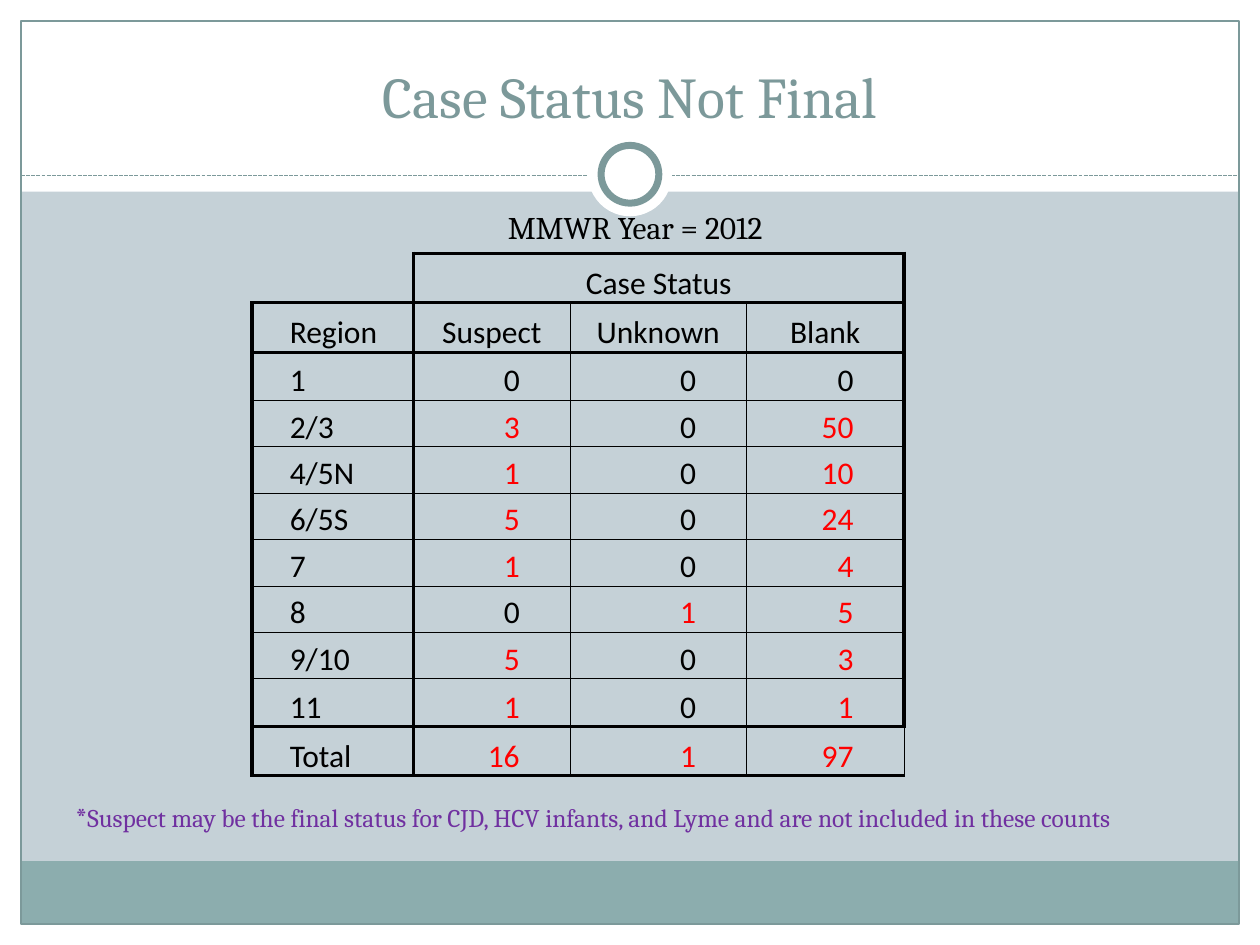
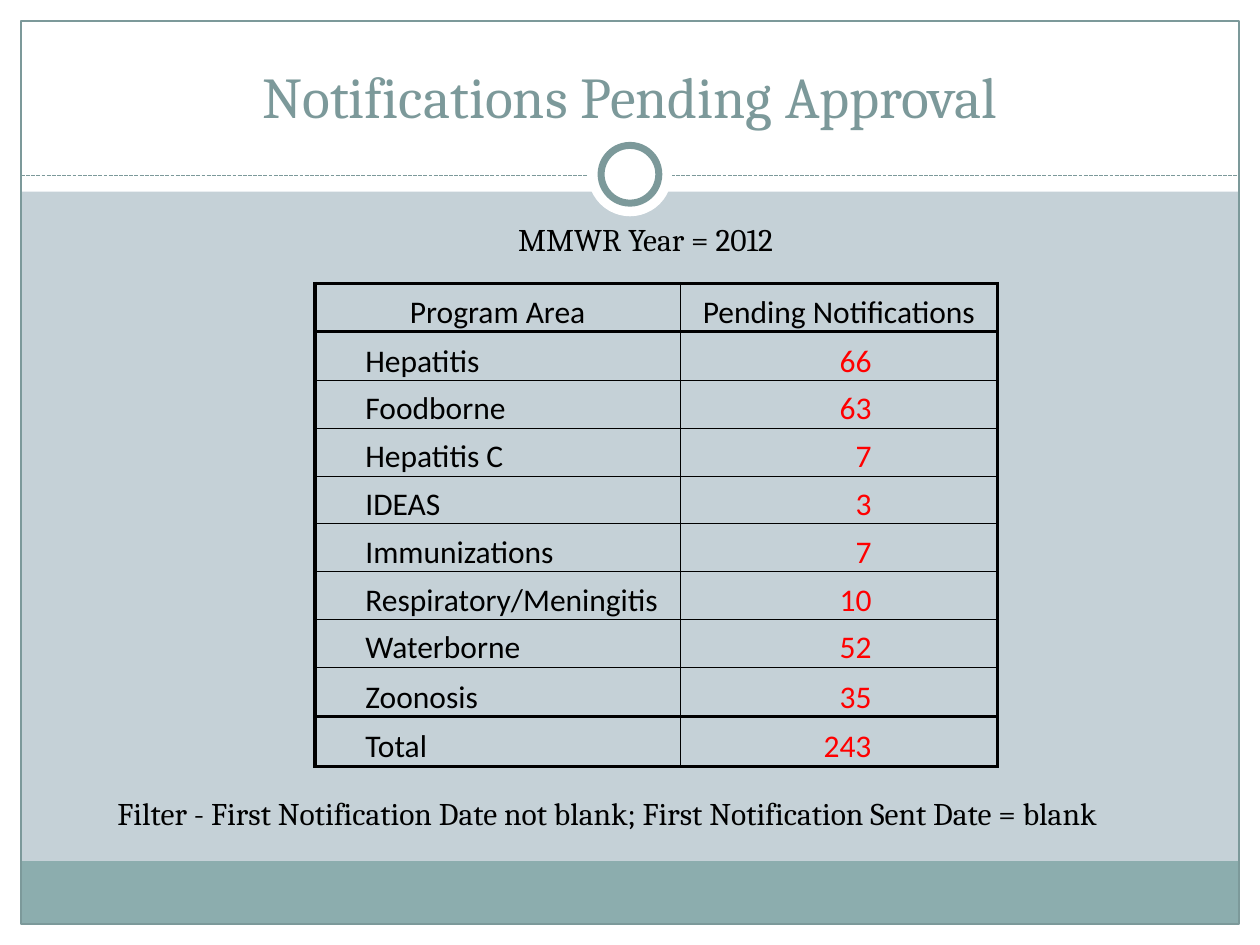
from lxml import etree
from pptx import Presentation
from pptx.dml.color import RGBColor
from pptx.enum.dml import MSO_LINE
from pptx.enum.shapes import MSO_CONNECTOR, MSO_SHAPE
from pptx.enum.text import MSO_ANCHOR, MSO_AUTO_SIZE, PP_ALIGN
from pptx.oxml.ns import qn
from pptx.util import Inches, Pt

# Colours
WHITE = RGBColor(0xFF, 0xFF, 0xFF)
BLACK = RGBColor(0, 0, 0)
RED = RGBColor(0xFF, 0, 0)
PURPLE = RGBColor(0x70, 0x30, 0xA0)
MIST = RGBColor(0xC5, 0xD1, 0xD7)
SAGE = RGBColor(0x8C, 0xAD, 0xAE)
TEAL = RGBColor(0x7C, 0x99, 0x9A)

# Enum members
RECTANGLE, OVAL = MSO_SHAPE.RECTANGLE, MSO_SHAPE.OVAL
STRAIGHT = MSO_CONNECTOR.STRAIGHT
DASH = MSO_LINE.SQUARE_DOT
BOTTOM = MSO_ANCHOR.BOTTOM
LEFT, CENTER, RIGHT = PP_ALIGN.LEFT, PP_ALIGN.CENTER, PP_ALIGN.RIGHT
GROW, FIXED = MSO_AUTO_SIZE.SHAPE_TO_FIT_TEXT, MSO_AUTO_SIZE.NONE

# Grid: 120 columns by 90 rows
COLUMNS, ROWS = 120, 90
UNIT = Inches(10) / COLUMNS
EDGE = 2
RIGHT_EDGE, BOTTOM_EDGE = COLUMNS - EDGE, ROWS - EDGE

# Text formats
TITLE = {"name": "Cambria", "size": Pt(33), "color": TEAL}
BODY = {"name": "Cambria", "size": Pt(18), "color": BLACK}
NOTE = {"name": "Cambria", "size": Pt(14.5), "color": PURPLE}
NOTE_STAR = {**NOTE, "size": Pt(16)}
CELL = {"name": "Calibri", "size": Pt(18), "color": BLACK}
ALERT = {**CELL, "color": RED}

# Table lines, in points
HEAVY, THIN = 2, 0.5
TIGHT = 0.12


def grid(*lengths):
    return [round(length * UNIT) for length in lengths]


class Deck:
    def __init__(self):
        self.presentation = Presentation()
        self.presentation.slide_width, self.presentation.slide_height = grid(COLUMNS, ROWS)
        background = self.presentation.slide_master.background.fill
        background.solid()
        background.fore_color.rgb = MIST
        self.layout = self.presentation.slide_layouts[5]
        self.slide = None

    def start_slide(self, title):
        self.slide = self.presentation.slides.add_slide(self.layout)
        shape = self.slide.shapes.title
        shape.left, shape.top, shape.width, shape.height = grid(4, 3, 112, 10)
        frame = shape.text_frame
        frame.auto_size, frame.vertical_anchor = FIXED, BOTTOM
        self.fill_text(frame, [(title, TITLE)], CENTER)

    def fill_text(self, frame, runs, alignment):
        paragraph = frame.paragraphs[0]
        paragraph.alignment = alignment
        for text, style in runs:
            run = paragraph.add_run()
            run.text = text
            for key, value in style.items():
                if key == "color":
                    run.font.color.rgb = value
                else:
                    setattr(run.font, key, value)

    def text(self, box, runs, alignment=LEFT):
        frame = self.slide.shapes.add_textbox(*grid(*box)).text_frame
        frame.word_wrap, frame.auto_size = True, GROW
        self.fill_text(frame, runs, alignment)

    def shape(self, kind, box, fill=None, line=None):
        shape = self.slide.shapes.add_shape(kind, *grid(*box))
        shape.shadow.inherit = False
        if fill is None:
            shape.fill.background()
        else:
            shape.fill.solid()
            shape.fill.fore_color.rgb = fill
        if line is None:
            shape.line.fill.background()
        else:
            shape.line.color.rgb, shape.line.width = TEAL, Pt(line)
        return shape

    def dashed_line(self, start, end):
        line = self.slide.shapes.add_connector(STRAIGHT, *grid(*start, *end))
        line.line.color.rgb, line.line.width = TEAL, Pt(0.75)
        line.line.dash_style = DASH
        etree.SubElement(line.element.spPr, qn("a:effectLst"))
        return line

    def share_frame(self):
        """Draw the bands, border and ring, then hand them to the layout."""
        inner_width, inner_height = COLUMNS - 2 * EDGE, ROWS - 2 * EDGE
        parts = [self.shape(RECTANGLE, box, WHITE) for box in (
            (0, BOTTOM_EDGE, COLUMNS, EDGE),
            (0, 0, COLUMNS, 18.25),
            (0, 0, EDGE, ROWS),
            (RIGHT_EDGE, 0, EDGE, ROWS))]
        parts += [
            self.shape(RECTANGLE, (EDGE, 82, inner_width, 5.9), SAGE),
            self.shape(RECTANGLE, (EDGE, EDGE, inner_width, inner_height), line=0.75),
            self.dashed_line((EDGE, 16.75), (RIGHT_EDGE, 16.75)),
            self.shape(OVAL, (56, 12.6, 8, 8), WHITE),
            self.shape(OVAL, (57.25, 13.85, 5.5, 5.5), WHITE, 4)]
        for placeholder in list(self.layout.placeholders)[1:]:
            placeholder.element.getparent().remove(placeholder.element)
        for index, part in enumerate(parts, start=2):
            self.layout.shapes.element.insert(index, part.element)

    def border(self, cell, widths):
        properties = cell._tc.get_or_add_tcPr()
        for side, width in widths.items():
            line = etree.SubElement(properties, qn(f"a:ln{side}"))
            if width is None:
                etree.SubElement(line, qn("a:noFill"))
                continue
            line.set("w", str(Pt(width)))
            fill = etree.SubElement(line, qn("a:solidFill"))
            etree.SubElement(fill, qn("a:srgbClr")).set("val", str(BLACK))

    def table(self, corner, widths, heights, data, headers, heavy_rows, heavy_columns,
              indent, number_inset, merge=None, exceptions=None):
        """Numbers other than zero are red; heavy lines fall on the listed boundaries."""
        table = self.slide.shapes.add_table(
            len(data), len(widths), *grid(*corner, sum(widths), sum(heights))).table
        table.first_row = table.horz_banding = False
        for column, width in zip(table.columns, grid(*widths)):
            column.width = width
        for row, height in zip(table.rows, grid(*heights)):
            row.height = height
        if merge:
            first, last = merge
            table.cell(*first).merge(table.cell(*last))

        for r, values in enumerate(data):
            for c, value in enumerate(values):
                cell = table.cell(r, c)
                if cell.is_spanned:
                    continue
                right = c + (cell.span_width if cell.is_merge_origin else 1)
                lines = {side: HEAVY if edge in heavy else THIN for side, edge, heavy in (
                    ("L", c, heavy_columns), ("R", right, heavy_columns),
                    ("T", r, heavy_rows), ("B", r + 1, heavy_rows))}
                lines.update((exceptions or {}).get((r, c), {}))
                self.border(cell, lines)
                cell.fill.background()

                # Labels sit left, numbers right, headings in the middle
                is_label = c == 0 and (r >= headers or merge is not None)
                is_number = c > 0 and r >= headers
                alignment = LEFT if is_label else RIGHT if is_number else CENTER
                margins = {"margin_left": indent if is_label else TIGHT,
                           "margin_right": number_inset if is_number else TIGHT,
                           "margin_top": TIGHT, "margin_bottom": 0}
                for name, length in margins.items():
                    setattr(cell, name, grid(length)[0])
                cell.vertical_anchor = BOTTOM
                if value != "":
                    style = ALERT if is_number and value else CELL
                    self.fill_text(cell.text_frame, [(str(value), style)], alignment)


STATUS_ROWS = [
    ("", "Case Status", "", ""),
    ("Region", "Suspect", "Unknown", "Blank"),
    ("1", 0, 0, 0),
    ("2/3", 3, 0, 50),
    ("4/5N", 1, 0, 10),
    ("6/5S", 5, 0, 24),
    ("7", 1, 0, 4),
    ("8", 0, 1, 5),
    ("9/10", 5, 0, 3),
    ("11", 1, 0, 1),
    ("Total", 16, 1, 97),
]
PENDING_ROWS = [
    ("Program Area", "Pending Notifications"),
    ("Hepatitis", 66),
    ("Foodborne", 63),
    ("Hepatitis C", 7),
    ("IDEAS", 3),
    ("Immunizations", 7),
    ("Respiratory/Meningitis", 10),
    ("Waterborne", 52),
    ("Zoonosis", 35),
    ("Total", 243),
]
YEAR = [("MMWR Year = 2012", BODY)]


def main():
    deck = Deck()

    # Case status by region
    deck.start_slide("Case Status Not Final")
    deck.share_frame()
    deck.text((6, 75.6, 112, 4.4), [
        ("*", NOTE_STAR),
        ("Suspect may be the final status for CJD, HCV infants, and Lyme "
         "and are not included in these counts", NOTE)])
    deck.table((24, 24.1), [15.4, 14.9, 16.8, 15],
               [4.75, 4.7, 4.55] + [4.43] * 6 + [4.55, 4.7],
               STATUS_ROWS, headers=2, heavy_rows={0, 1, 2, 10, 11},
               heavy_columns={0, 1, 4}, indent=3.6, number_inset=4.8,
               merge=((0, 1), (0, 3)),
               exceptions={(0, 0): {"L": None, "T": None}, (10, 3): {"R": THIN}})
    deck.text((34, 19.2, 53, 4.8), YEAR, CENTER)

    # Pending notifications by program area
    deck.start_slide("Notifications Pending Approval")
    deck.table((30, 27), [34.8, 30.2],
               [4.6, 4.65] + [4.55] * 6 + [4.7, 4.75],
               PENDING_ROWS, headers=1, heavy_rows={0, 1, 9, 10},
               heavy_columns={0, 2}, indent=4.8, number_inset=12)
    deck.text((35, 20.4, 53, 4.8), YEAR, CENTER)
    deck.text((10, 75, 105, 4.8), [
        ("Filter - First Notification Date not blank; "
         "First Notification Sent Date = blank", BODY)])

    deck.presentation.save("out.pptx")


if __name__ == "__main__":
    main()
